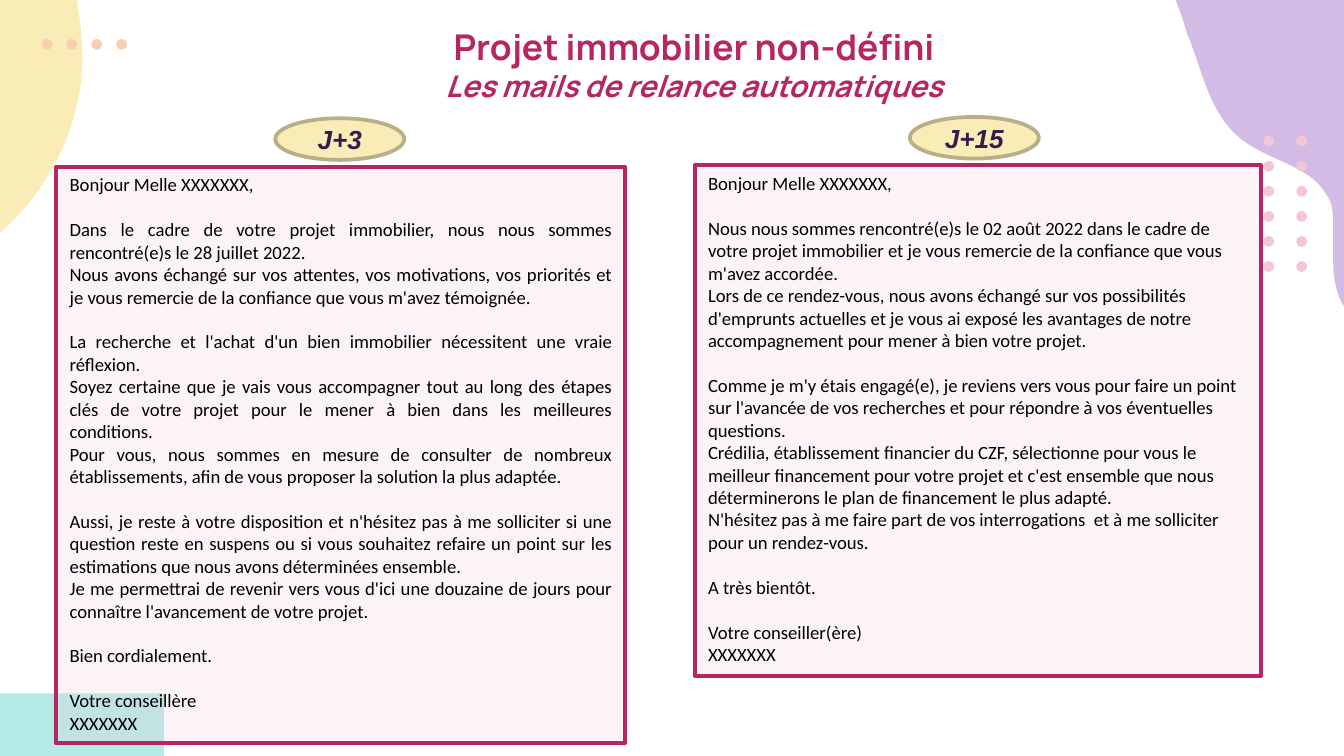
from dataclasses import dataclass

from lxml import etree
from pptx import Presentation
from pptx import util as u
from pptx.dml import color
from pptx.enum import shapes, text
from pptx.oxml import ns

WIDTH = 10
HEIGHT = WIDTH * 9 / 16
BERRY, PINK, CREAM = "B62661", "F3C5D8", "FAECB6"
OVAL, RECTANGLE = shapes.MSO_SHAPE.OVAL, shapes.MSO_SHAPE.RECTANGLE
LEFT, CENTER, JUSTIFY = text.PP_ALIGN.LEFT, text.PP_ALIGN.CENTER, text.PP_ALIGN.JUSTIFY

HILL = [
    (1, 0), (0, 0), (0, 1), (0.49, 1),
    (0.72, 0.91, 0.87, 0.77, 0.87, 0.63),
    (0.87, 0.52, 0.79, 0.41, 0.78, 0.3),
    (0.78, 0.18, 0.87, 0.08, 1, 0),
]
WAVE = [
    (0, 0), (1, 0), (1, 1), (0.74, 1),
    (0.69, 0.96, 0.65, 0.92, 0.65, 0.84),
    (0.65, 0.81, 0.65, 0.78, 0.65, 0.76),
    (0.65, 0.73, 0.65, 0.7, 0.63, 0.68),
    (0.58, 0.61, 0.46, 0.6, 0.37, 0.55),
    (0.26, 0.49, 0.24, 0.38, 0.19, 0.29),
    (0.15, 0.18, 0.08, 0.09, 0, 0),
]
FIRST_LETTER = [
    ["Bonjour Melle XXXXXXX,"],
    ["Dans le cadre de votre projet immobilier, nous nous sommes rencontré(e)s le 28 juillet 2022.",
     "Nous avons échangé sur vos attentes, vos motivations, vos priorités et je vous remercie de la confiance que vous m'avez témoignée."],
    ["La recherche et l'achat d'un bien immobilier nécessitent une vraie réflexion.",
     "Soyez certaine que je vais vous accompagner tout au long des étapes clés de votre projet pour le mener à bien dans les meilleures conditions.",
     "Pour vous, nous sommes en mesure de consulter de nombreux établissements, afin de vous proposer la solution la plus adaptée."],
    ["Aussi, je reste à votre disposition et n'hésitez pas à me solliciter si une question reste en suspens ou si vous souhaitez refaire un point sur les estimations que nous avons déterminées ensemble.",
     "Je me permettrai de revenir vers vous d'ici une douzaine de jours pour connaître l'avancement de votre projet."],
    ["Bien cordialement."],
    ["Votre conseillère", "XXXXXXX"],
]
SECOND_LETTER = [
    ["Bonjour Melle XXXXXXX,"],
    ["Nous nous sommes rencontré(e)s le 02 août 2022 dans le cadre de votre projet immobilier et je vous remercie de la confiance que vous m'avez accordée.",
     "Lors de ce rendez-vous, nous avons échangé sur vos possibilités d'emprunts actuelles et je vous ai exposé les avantages de notre accompagnement pour mener à bien votre projet."],
    ["Comme je m'y étais engagé(e), je reviens vers vous pour faire un point sur l'avancée de vos recherches et pour répondre à vos éventuelles questions.",
     "Crédilia, établissement financier du CZF, sélectionne pour vous le meilleur financement pour votre projet et c'est ensemble que nous déterminerons le plan de financement le plus adapté.",
     "N'hésitez pas à me faire part de vos interrogations  et à me solliciter pour un rendez-vous."],
    ["A très bientôt."],
    ["Votre conseiller(ère)", "XXXXXXX"],
]


@dataclass
class Box:
    left: float
    top: float
    width: float
    height: float

    def point(self, across, down):
        return self.left + across * self.width, self.top + down * self.height

    def emu(self):
        return [u.Inches(side) for side in (self.left, self.top, self.width, self.height)]


def rgb(code):
    return color.RGBColor.from_string(code)


def paint(shape, fill, line=None, weight=0, opacity=None):
    shape.shadow.inherit = False
    shape.fill.solid()
    shape.fill.fore_color.rgb = rgb(fill)
    if opacity:
        tone = shape.fill._xPr.find(".//" + ns.qn("a:srgbClr"))
        etree.SubElement(tone, ns.qn("a:alpha"), val=str(opacity * 1000))
    if line:
        shape.line.color.rgb = rgb(line)
        shape.line.width = u.Pt(weight)
        etree.SubElement(shape.line._get_or_add_ln(), ns.qn("a:round"))
    else:
        shape.line.fill.background()


def style(font, name, size, code, bold=False, italic=False):
    font.name, font.size, font.color.rgb = name, u.Pt(size), rgb(code)
    font.bold, font.italic = bold, italic


def add_preset(page, kind, box, *look):
    shape = page.shapes.add_shape(kind, *box.emu())
    paint(shape, *look)
    return shape


def trace(outline, steps=24):
    points = [outline[0]]
    for part in outline[1:]:
        if len(part) == 2:
            points.append(part)
            continue
        corners = [points[-1], part[:2], part[2:4], part[4:]]
        for step in range(1, steps + 1):
            t = step / steps
            weights = ((1 - t) ** 3, 3 * t * (1 - t) ** 2, 3 * t * t * (1 - t), t ** 3)
            points.append(tuple(sum(w * c[axis] for w, c in zip(weights, corners)) for axis in (0, 1)))
    return points


def add_blob(page, box, outline, fill):
    points = [tuple(u.Inches(side) for side in box.point(*point)) for point in trace(outline)]
    builder = page.shapes.build_freeform(*points[0])
    builder.add_line_segments(points[1:], close=True)
    paint(builder.convert_to_shape(), fill)


def add_dots(page, box, columns, rows, fill, size=0.08):
    for column in range(columns):
        for row in range(rows):
            left, top = box.point(column / columns, row / rows)
            add_preset(page, OVAL, Box(left, top, size, size), fill)


def add_decor(page):
    add_blob(page, Box(-0.84, -1.82, 1.67, 3.57), HILL, CREAM)
    add_blob(page, Box(8.38, -0.66, 2.37, 3.11), WAVE, "D2BCE6")
    add_dots(page, Box(9.4, 1.01, 0.49, 1.12), 2, 6, PINK)
    add_preset(page, RECTANGLE, Box(-0.01, 5.16, 1.23, 0.47), "B5EBE7")
    add_dots(page, Box(0.31, 0.29, 0.74, 0.08), 4, 1, "F7CFB0")


def add_title(page, box, heading, subtitle):
    title = page.shapes.title
    title.left, title.top, title.width, title.height = box.emu()
    frame = title.text_frame
    frame.auto_size = text.MSO_AUTO_SIZE.NONE
    frame.vertical_anchor = text.MSO_ANCHOR.MIDDLE
    frame.margin_left = frame.margin_right = frame.margin_top = frame.margin_bottom = u.Inches(0.1)
    para = frame.paragraphs[0]
    para.alignment = CENTER
    span = para.add_run()
    span.text = heading
    style(span.font, "Manrope", 19, BERRY, bold=True)
    para.add_line_break()
    span = para.add_run()
    span.text = subtitle
    style(span.font, "Manrope", 16, BERRY, bold=True, italic=True)


def add_badge(page, box, label):
    badge = add_preset(page, OVAL, box, CREAM, "B9AF87", 2)
    badge.text_frame.vertical_anchor = text.MSO_ANCHOR.MIDDLE
    para = badge.text_frame.paragraphs[0]
    para.text, para.alignment = label, CENTER
    style(para.font, "Arial", 14, "351C4C", bold=True, italic=True)


def add_letter(page, box, label, badge_share, blocks, alignment):
    letter = add_preset(page, RECTANGLE, box, PINK, BERRY, 2.25, 20)
    frame = letter.text_frame
    frame.word_wrap = True
    frame.vertical_anchor = text.MSO_ANCHOR.TOP
    for block_index, block in enumerate(blocks):
        for line_index, line in enumerate(block):
            first = block_index == line_index == 0
            para = frame.paragraphs[0] if first else frame.add_paragraph()
            para.text, para.alignment = line, alignment
            para.space_before = u.Pt(12 if block_index and not line_index else 0)
            style(para.font, "Calibri", 10, "000000")
    left, top = box.point(badge_share, 0)
    add_badge(page, Box(left, top - 0.36, 0.96, 0.31), label)


def main():
    deck = Presentation()
    deck.slide_width, deck.slide_height = u.Inches(WIDTH), u.Inches(HEIGHT)
    page = deck.slides.add_slide(deck.slide_layouts[5])
    add_decor(page)
    add_title(page, Box(3.05, 0.1, 4.23, 0.76),
              "Projet immobilier non-défini", "Les mails de relance automatiques")
    add_letter(page, Box(0.42, 1.24, 4.23, 4.29), "J+3", 0.385, FIRST_LETTER, JUSTIFY)
    add_letter(page, Box(5.17, 1.23, 4.21, 3.8), "J+15", 0.38, SECOND_LETTER, LEFT)
    deck.save("out.pptx")


if __name__ == "__main__":
    main()
